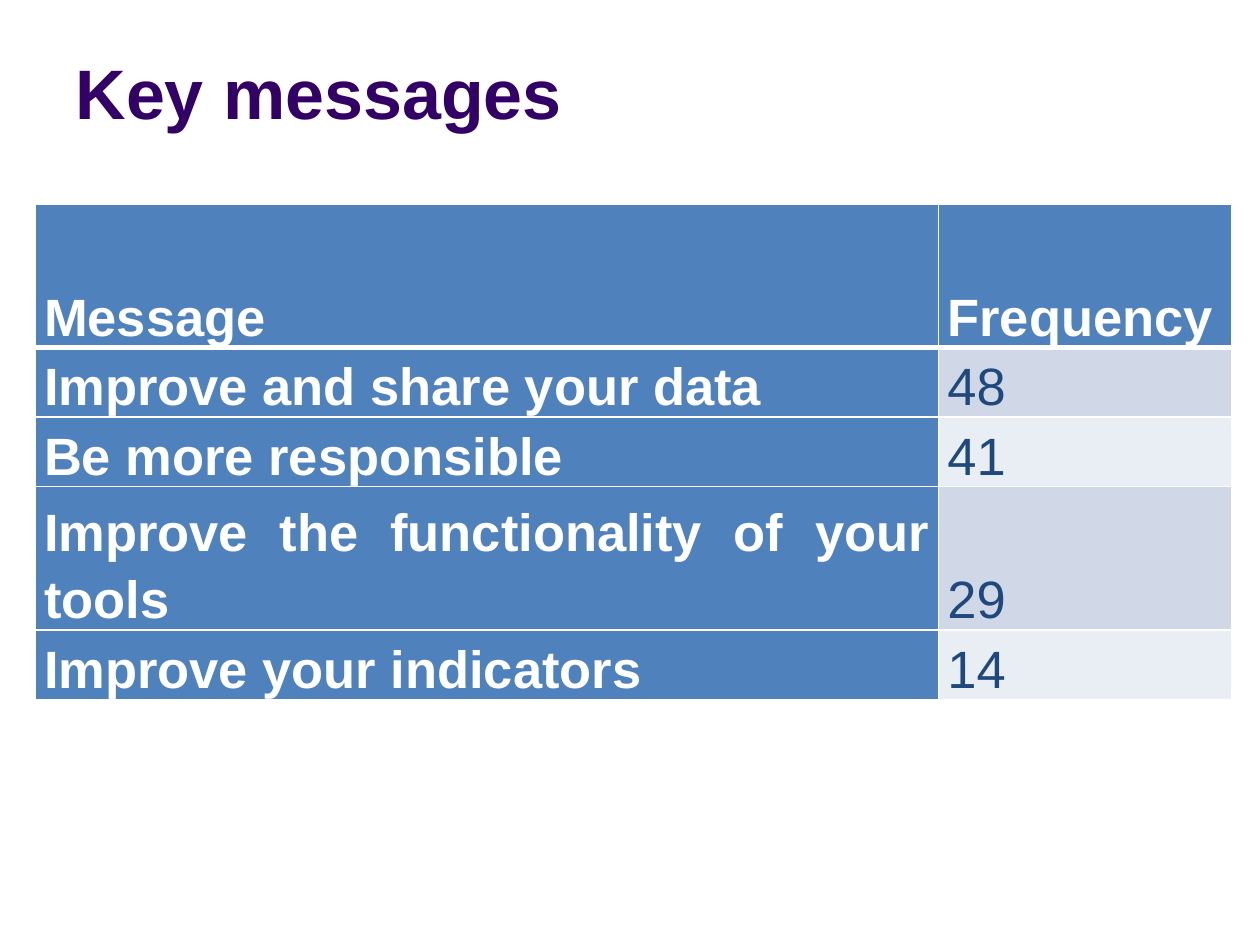
from pptx import Presentation
from pptx.dml.color import RGBColor
from pptx.enum.text import MSO_ANCHOR, PP_ALIGN
from pptx.oxml import parse_xml
from pptx.oxml.ns import nsdecls
from pptx.util import Inches, Pt

BOTTOM, MIDDLE = MSO_ANCHOR.BOTTOM, MSO_ANCHOR.MIDDLE
LEFT, JUSTIFY = PP_ALIGN.LEFT, PP_ALIGN.JUSTIFY

TITLE = "Key messages"
ROWS = [
    ("Message", "Frequency"),
    ("Improve and share your data", "48"),
    ("Be more responsible", "41"),
    ("Improve the functionality of your tools", "29"),
    ("Improve your indicators", "14"),
]
ALIGNMENTS = [(JUSTIFY, LEFT)] + [(JUSTIFY, JUSTIFY)] * 3 + [(LEFT, LEFT)]
COLORS = {
    "title": "330066",
    "head": "4F81BD",
    "odd": "D0D8E8",
    "even": "E9EDF4",
    "white": "FFFFFF",
    "value": "1F497D",
}
COLUMN_WIDTHS = (7.17, 2.33)
SINGLE, DOUBLE = 0.55, 1.14
ROW_HEIGHTS = (DOUBLE, SINGLE, SINGLE, DOUBLE, SINGLE)
CELL_FORMAT = {
    "vertical_anchor": BOTTOM,
    "margin_left": Inches(0.07),
    "margin_right": Inches(0.07),
    "margin_top": 0,
    "margin_bottom": 0,
}


def color(name):
    return RGBColor.from_string(COLORS[name])


def write(paragraph, text, size, bold, color_name, alignment):
    paragraph.alignment = alignment
    span = paragraph.add_run()
    span.text = text
    font_format = {"name": "Arial", "size": Pt(size), "bold": bold}
    for key, value in font_format.items():
        setattr(span.font, key, value)
    span.font.color.rgb = color(color_name)


def add_borders(cell, widths):
    properties = cell._tc.get_or_add_tcPr()
    for position, (side, width) in enumerate(widths.items()):
        line = parse_xml(
            f'<a:{side} {nsdecls("a")} w="{Pt(width)}"><a:solidFill>'
            f'<a:srgbClr val="{COLORS["white"]}"/></a:solidFill></a:{side}>'
        )
        properties.insert(position, line)


def add_title(page):
    title = page.shapes.title
    title.left, title.top = Inches(0.5), Inches(0.3)
    title.width, title.height = Inches(9), Inches(0.85)
    title.text_frame.vertical_anchor = MIDDLE
    write(title.text_frame.paragraphs[0], TITLE, 40, True, "title", LEFT)


def add_messages(page):
    table = page.shapes.add_table(
        len(ROWS), len(COLUMN_WIDTHS), Inches(0.28), Inches(1.62),
        Inches(sum(COLUMN_WIDTHS)), Inches(sum(ROW_HEIGHTS)),
    ).table
    table.first_col = True
    for column, width in zip(table.columns, COLUMN_WIDTHS):
        column.width = Inches(width)
    for row, height in zip(table.rows, ROW_HEIGHTS):
        row.height = Inches(height)
    for row_index, texts in enumerate(ROWS):
        for column_index, text in enumerate(texts):
            cell = table.cell(row_index, column_index)
            for key, value in CELL_FORMAT.items():
                setattr(cell, key, value)
            heading = row_index == 0 or column_index == 0
            band = "odd" if row_index % 2 else "even"
            cell.fill.solid()
            cell.fill.fore_color.rgb = color("head" if heading else band)
            add_borders(cell, {
                "lnL": 1,
                "lnR": 1,
                "lnT": 3 if row_index == 1 else 1,
                "lnB": 3 if row_index == 0 else 1,
            })
            paragraph = cell.text_frame.paragraphs[0]
            paragraph.line_spacing = 1.15
            write(paragraph, text, 30, heading, "white" if heading else "value",
                  ALIGNMENTS[row_index][column_index])


def main():
    deck = Presentation()
    deck.slide_width, deck.slide_height = Inches(10), Inches(7.5)
    page = deck.slides.add_slide(deck.slide_layouts[5])
    add_title(page)
    add_messages(page)
    deck.save("out.pptx")


if __name__ == "__main__":
    main()
